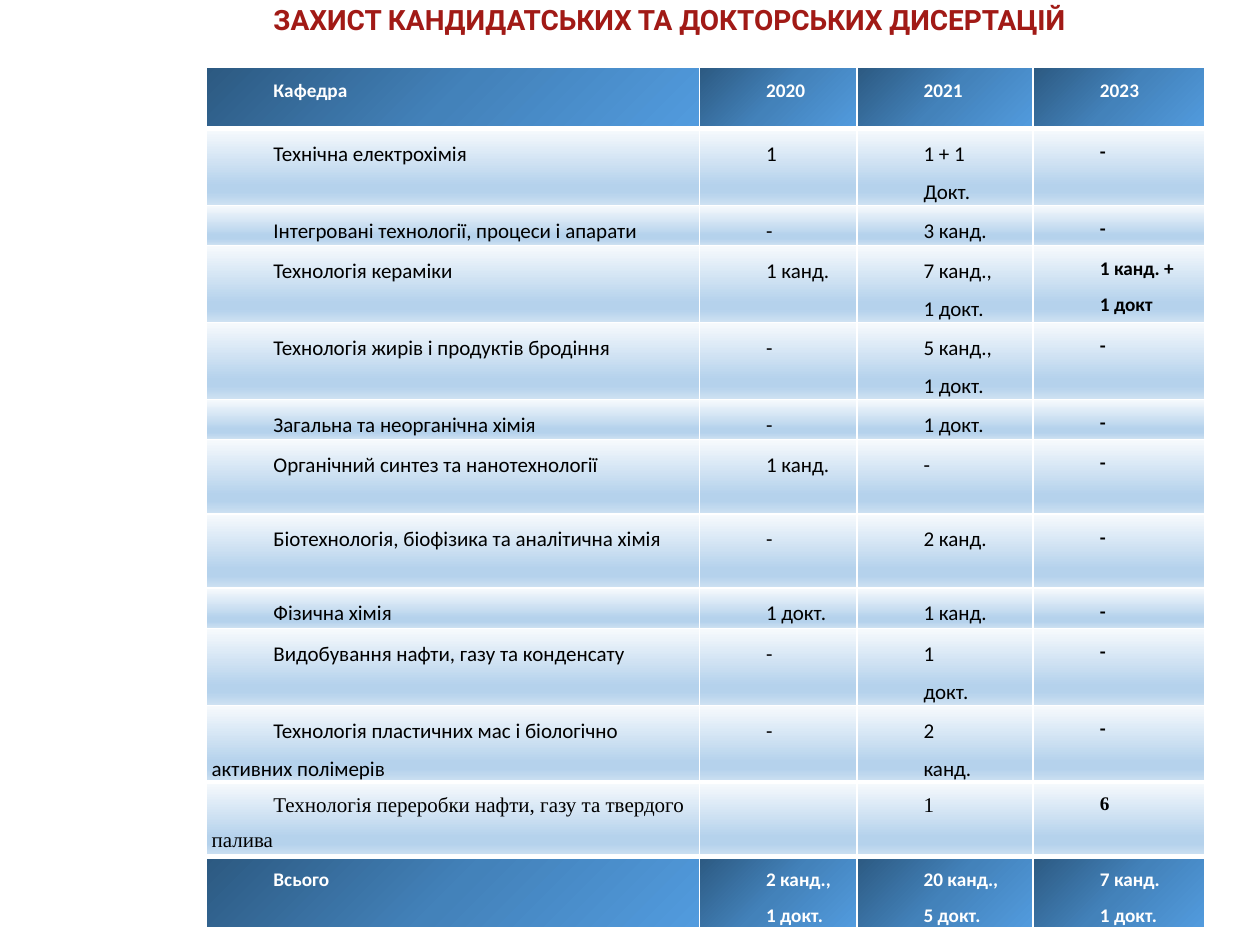
from lxml.etree import SubElement
from pptx import Presentation
from pptx.dml.color import RGBColor
from pptx.enum.text import MSO_ANCHOR, PP_ALIGN
from pptx.oxml.ns import qn
from pptx.util import Inches, Pt

# Content
TITLE = "ЗАХИСТ КАНДИДАТСЬКИХ ТА ДОКТОРСЬКИХ ДИСЕРТАЦІЙ"
ROWS = [
    ("Кафедра", "2020", "2021", "2023"),
    ("Технічна електрохімія", "1", "1 + 1\nДокт.", "-"),
    ("Інтегровані технології, процеси і апарати", "-", "3 канд.", "-"),
    ("Технологія кераміки", "1 канд.", "7 канд.,\n1 докт.", "1 канд. +\n1 докт"),
    ("Технологія жирів і продуктів бродіння", "-", "5 канд.,\n1 докт.", "-"),
    ("Загальна та неорганічна хімія", "-", "1 докт.", "-"),
    ("Органічний синтез та нанотехнології", "1 канд.", "-", "-"),
    ("Біотехнологія, біофізика та аналітична хімія", "-", "2 канд.", "-"),
    ("Фізична хімія", "1 докт.", "1 канд.", "-"),
    ("Видобування нафти, газу та конденсату", "-", "1\nдокт.", "-"),
    ("Технологія пластичних мас і біологічно активних полімерів",
     "-", "2\nканд.", "-"),
    ("Технологія переробки нафти, газу та твердого палива", "", "1", "6"),
    ("Всього", "2 канд.,\n1 докт.", "20 канд.,\n5 докт.", "7 канд.\n1 докт."),
]
LAST = len(ROWS) - 1
SERIF_ROW = LAST - 1

# Sizes in inches
COLUMN_WIDTHS = [3.91, 1.25, 1.4, 1.36]
TALL, SHORT = 0.59, 0.32
SHORT_ROWS = {2, 5, 8}
ROW_HEIGHTS = [0.49] + [SHORT if i in SHORT_ROWS else TALL for i in range(1, LAST)] + [0.55]

# Colours and gradients: (angle, [(position in percent, colour)])
RED = RGBColor(0xA1, 0x1A, 0x16)
WHITE = RGBColor(0xFF, 0xFF, 0xFF)
BLACK = RGBColor(0x00, 0x00, 0x00)
NAVY = RGBColor(0x2C, 0x59, 0x81)
BLUE = RGBColor(0x43, 0x82, 0xBA)
AZURE = RGBColor(0x52, 0x9B, 0xDE)
MIST = RGBColor(0xF7, 0xFA, 0xFD)
SKY = RGBColor(0xB5, 0xD2, 0xEC)
PALE = RGBColor(0xCE, 0xE1, 0xF2)
BAND_GRADIENT = (45, [(0, NAVY), (50, BLUE), (100, AZURE)])
BODY_GRADIENT = (90, [(0, MIST), (74, SKY), (83, SKY), (100, PALE)])


def apply(target, **values):
    for name, value in values.items():
        setattr(target, name, value)


def add_colour(parent, colour):
    SubElement(parent, qn("a:srgbClr"), val=str(colour))


def paint_cell(cell, gradient, top, bottom):
    """Borders come before the fill in the cell properties."""
    props = cell._tc.get_or_add_tcPr()
    for side, width in (("L", 1), ("R", 1), ("T", top), ("B", bottom)):
        line = SubElement(props, qn(f"a:ln{side}"), w=str(Pt(width)))
        add_colour(SubElement(line, qn("a:solidFill")), WHITE)
    angle, stops = gradient
    fill = SubElement(props, qn("a:gradFill"), rotWithShape="1")
    stop_list = SubElement(fill, qn("a:gsLst"))
    for position, colour in stops:
        add_colour(SubElement(stop_list, qn("a:gs"), pos=str(position * 1000)), colour)
    SubElement(fill, qn("a:lin"), ang=str(angle * 60000), scaled="0")


def write_cell(cell, text, font):
    apply(cell, text=text, margin_left=Inches(0.04), margin_right=Inches(0.04),
          margin_top=0, margin_bottom=0)
    for para in cell.text_frame.paragraphs:
        para.line_spacing = 1.5
        para._p.get_or_add_pPr().set("indent", str(Inches(0.49)))
        for span in para.runs:
            apply(span.font, **font)
            span.font.color.rgb = font["colour"] if "colour" in font else BLACK


def main():
    deck = Presentation()
    apply(deck, slide_width=Inches(10), slide_height=Inches(7.5))
    page = deck.slides.add_slide(deck.slide_layouts[5])

    # Title
    title = page.shapes.title
    apply(title, left=Inches(1.34), top=0, width=Inches(8.54), height=Inches(0.45))
    box = title.text_frame
    apply(box, text=TITLE, vertical_anchor=MSO_ANCHOR.TOP, word_wrap=True,
          margin_left=Inches(0.83))
    para = box.paragraphs[0]
    apply(para, alignment=PP_ALIGN.LEFT, line_spacing=0.9)
    span = para.runs[0]
    apply(span.font, name="Roboto", size=Pt(16), bold=True)
    span.font.color.rgb = RED

    # Table grid
    table = page.shapes.add_table(
        len(ROWS), len(COLUMN_WIDTHS), Inches(1.64), Inches(0.53),
        Inches(sum(COLUMN_WIDTHS)), Inches(sum(ROW_HEIGHTS))).table
    apply(table, horz_banding=False, last_row=True)
    for column, width in zip(table.columns, COLUMN_WIDTHS):
        column.width = Inches(width)
    for row, height in zip(table.rows, ROW_HEIGHTS):
        row.height = Inches(height)

    # Table cells: heavy rules set off the header, the serif row and the total
    heavy_below = {0, SERIF_ROW - 1, SERIF_ROW}
    for r, texts in enumerate(ROWS):
        band = r in (0, LAST)
        for c, text in enumerate(texts):
            cell = table.cell(r, c)
            strong = band or c == len(texts) - 1
            write_cell(cell, text, {
                "name": "Times New Roman" if r == SERIF_ROW else "Calibri",
                "size": Pt(11 if strong else 12),
                "bold": strong,
            })
            if band:
                for para in cell.text_frame.paragraphs:
                    for span in para.runs:
                        span.font.color.rgb = WHITE
            paint_cell(cell, BAND_GRADIENT if band else BODY_GRADIENT,
                       top=3 if r - 1 in heavy_below else 1,
                       bottom=3 if r in heavy_below else 1)
    table.cell(0, 0).text_frame.paragraphs[0].alignment = PP_ALIGN.JUSTIFY

    deck.save("out.pptx")


if __name__ == "__main__":
    main()
